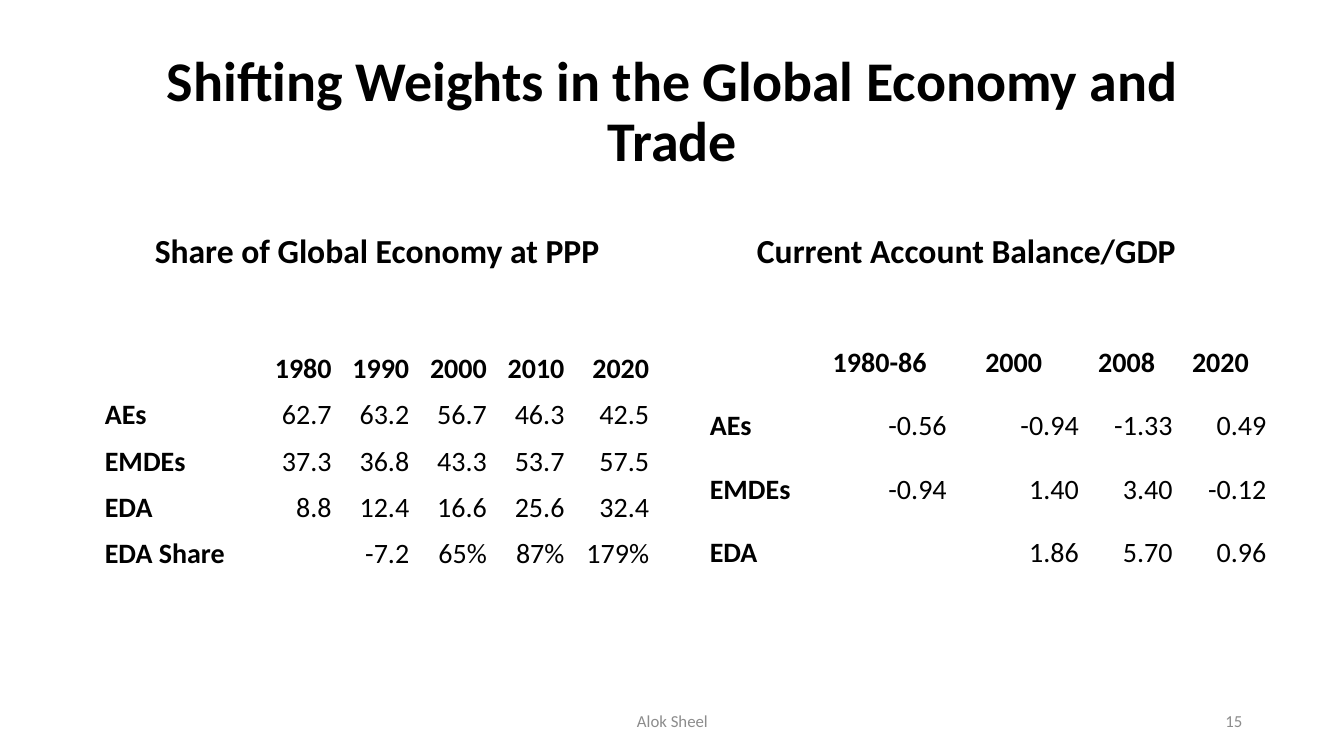
from pptx import Presentation
from pptx.dml.color import RGBColor
from pptx.enum import text
from pptx.util import Inches, Pt

BLACK = RGBColor(0x00, 0x00, 0x00)
GRAY = RGBColor(0x8C, 0x8C, 0x8C)
LEFT, CENTER, RIGHT = text.PP_ALIGN.LEFT, text.PP_ALIGN.CENTER, text.PP_ALIGN.RIGHT
MIDDLE, BOTTOM = text.MSO_ANCHOR.MIDDLE, text.MSO_ANCHOR.BOTTOM


def style_paragraph(paragraph, size, bold, color, alignment):
    paragraph.font.name = "Calibri"
    paragraph.font.size = Pt(size)
    paragraph.font.bold = bold
    paragraph.font.color.rgb = color
    paragraph.alignment = alignment


presentation = Presentation()
presentation.slide_width = Inches(13.33)
presentation.slide_height = Inches(7.5)
slide = presentation.slides.add_slide(presentation.slide_layouts[6])

# Title, table headings and footer
text_boxes = [
    ("Shifting Weights in the Global Economy and Trade",
     (0.92, 0.4, 11.5, 1.45), 40, True, BLACK, CENTER, MIDDLE, 0.9),
    ("Share of Global Economy at PPP",
     (0.92, 1.84, 5.64, 0.9), 24, True, BLACK, CENTER, BOTTOM, 0.9),
    ("Current Account Balance/GDP",
     (6.75, 1.84, 5.67, 0.9), 24, True, BLACK, CENTER, BOTTOM, 0.9),
    ("Alok Sheel", (4.42, 6.95, 4.5, 0.4), 12, False, GRAY, CENTER, MIDDLE, 1.0),
    ("15", (9.42, 6.95, 3, 0.4), 12, False, GRAY, RIGHT, MIDDLE, 1.0),
]
for wording, place, size, bold, color, alignment, anchor, spacing in text_boxes:
    frame = slide.shapes.add_textbox(*map(Inches, place)).text_frame
    frame.word_wrap = True
    frame.vertical_anchor = anchor
    paragraph = frame.paragraphs[0]
    paragraph.text = wording
    paragraph.line_spacing = spacing
    style_paragraph(paragraph, size, bold, color, alignment)

# Tables: left, top, column widths, row height, header alignment, rows
tables = [
    (1.03, 3.37, [1.42, 0.85, 0.77, 0.77, 0.77, 0.84], 0.46, RIGHT, [
        ["", "1980", "1990", "2000", "2010", "2020"],
        ["AEs", "62.7", "63.2", "56.7", "46.3", "42.5"],
        ["EMDEs", "37.3", "36.8", "43.3", "53.7", "57.5"],
        ["EDA", "8.8", "12.4", "16.6", "25.6", "32.4"],
        ["EDA Share", "", "-7.2", "65%", "87%", "179%"],
    ]),
    (7.03, 3.14, [1.02, 1.35, 1.31, 0.93, 0.93], 0.63, CENTER, [
        ["", "1980-86", "2000", "2008", "2020"],
        ["AEs", "-0.56", "-0.94", "-1.33", "0.49"],
        ["EMDEs", "-0.94", "1.40", "3.40", "-0.12"],
        ["EDA", "", "1.86", "5.70", "0.96"],
    ]),
]
grids = []
for left, top, widths, row_height, header_alignment, rows in tables:
    grid = slide.shapes.add_table(
        len(rows), len(widths), Inches(left), Inches(top),
        Inches(sum(widths)), Inches(row_height * len(rows))).table
    grids.append(grid)
    grid.horz_banding = False
    for column, width in zip(grid.columns, widths):
        column.width = Inches(width)
    for row_index, row in enumerate(rows):
        grid.rows[row_index].height = Inches(row_height)
        for column_index, value in enumerate(row):
            cell = grid.cell(row_index, column_index)
            cell.fill.background()
            cell.vertical_anchor = BOTTOM
            cell.margin_left = cell.margin_right = cell.margin_top = Inches(0.01)
            cell.margin_bottom = 0
            cell.text = value
            is_header = row_index == 0
            is_label = column_index == 0
            alignment = LEFT if is_label else header_alignment if is_header else RIGHT
            style_paragraph(cell.text_frame.paragraphs[0], 20,
                            is_header or is_label, BLACK, alignment)

# The EDA Share label spans the empty 1980 cell
share_table = grids[0]
share_table.cell(4, 0).merge(share_table.cell(4, 1))

presentation.save("out.pptx")
